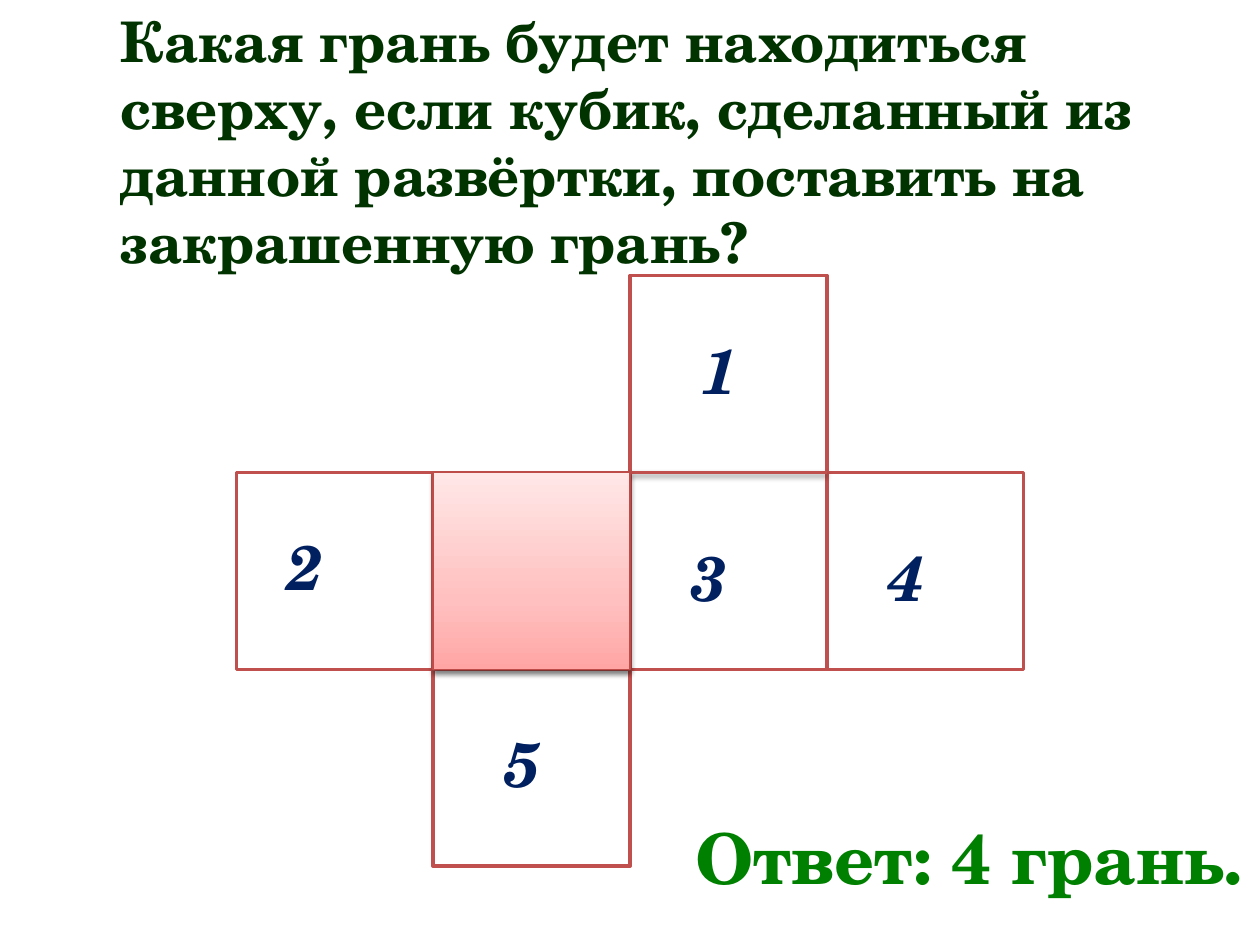
from lxml import etree
from pptx import Presentation
from pptx.dml.color import RGBColor
from pptx.enum import shapes, text
from pptx.oxml import ns
from pptx.util import Pt

FONT = "TeX Gyre Schola"
QUESTION = ("Какая грань будет находиться сверху, если кубик, сделанный из "
            "данной развёртки, поставить на закрашенную грань?")
ANSWER = "Ответ: 4 грань."
SIDE, NET_LEFT, NET_TOP = 112.5, 135, 157.5
STRIPS = [(0, 1, 4, 1), (1, 1, 1, 2), (2, 0, 1, 2)]
FOLDS = [(1, 2), (2, 1)]
PAINTED = (1, 1)
PAINT = [(0, "FFA6A5"), (35, "FFC0BF"), (100, "FFE7E7")]
NUMBERS = [("1", 394, 186), ("4", 500.5, 304), ("3", 388, 304),
           ("5", 281.5, 410.5), ("2", 157.5, 298)]


def color(value):
    return RGBColor.from_string(value)


def child(parent, tag, **attributes):
    return etree.SubElement(parent, ns.qn(tag), attributes)


def corner(column, row):
    return Pt(NET_LEFT + column * SIDE), Pt(NET_TOP + row * SIDE)


def add_words(slide, words, box, size, shade, italic=None, indent=0):
    frame = slide.shapes.add_textbox(*map(Pt, box)).text_frame
    frame.word_wrap = True
    frame.auto_size = text.MSO_AUTO_SIZE.NONE
    paragraph = frame.paragraphs[0]
    if indent:
        frame.margin_right = 0
        paragraph._p.get_or_add_pPr().set("indent", str(Pt(indent)))
    run = paragraph.add_run()
    run.text = words
    run.font.name, run.font.size = FONT, Pt(size)
    run.font.bold, run.font.italic = True, italic
    run.font.color.rgb = color(shade)


def add_strip(slide, column, row, across, down, edge="C0504D", weight=2):
    strip = slide.shapes.add_shape(
        shapes.MSO_SHAPE.RECTANGLE, *corner(column, row),
        Pt(across * SIDE), Pt(down * SIDE))
    strip.shadow.inherit = False
    strip.fill.solid()
    strip.fill.fore_color.rgb = color("FFFFFF")
    strip.line.color.rgb = color(edge)
    strip.line.width = Pt(weight)
    return strip


def add_shadow(effects):
    shadow = child(effects, "a:outerShdw", blurRad=str(Pt(3.1)),
                   dist=str(Pt(1.6)), dir="5400000", rotWithShape="0")
    black = child(shadow, "a:srgbClr", val="000000")
    child(black, "a:alpha", val="38000")


def add_fold(slide, column, row):
    fold = slide.shapes.add_connector(
        shapes.MSO_CONNECTOR.STRAIGHT,
        *corner(column, row), *corner(column + 1, row))
    fold.line.color.rgb = color("C0504D")
    fold.line.width = Pt(2)
    add_shadow(child(fold._element.spPr, "a:effectLst"))


def add_painted_face(slide):
    face = add_strip(slide, *PAINTED, 1, 1, edge="BF4C48", weight=0.75)
    face.fill.gradient()
    face.fill.gradient_angle = 90
    properties = face._element.spPr
    stops = properties.find(".//" + ns.qn("a:gsLst"))
    for stop in list(stops):
        stops.remove(stop)
    for position, shade in PAINT:
        stop = child(stops, "a:gs", pos=str(position * 1000))
        child(stop, "a:srgbClr", val=shade)
    add_shadow(properties.find(ns.qn("a:effectLst")))


def main():
    deck = Presentation()
    deck.slide_width, deck.slide_height = Pt(720), Pt(540)
    slide = deck.slides.add_slide(deck.slide_layouts[6])
    add_words(slide, QUESTION, (62, 0, 638, 163), 32, "003300")
    add_words(slide, ANSWER, (336, 462, 384, 78), 40, "008000", indent=54.5)
    for strip in STRIPS:
        add_strip(slide, *strip)
    for fold in FOLDS:
        add_fold(slide, *fold)
    for number, left, top in NUMBERS:
        add_words(slide, number, (left, top, 50.5, 51), 36, "002060", italic=True)
    add_painted_face(slide)
    deck.save("out.pptx")


if __name__ == "__main__":
    main()
